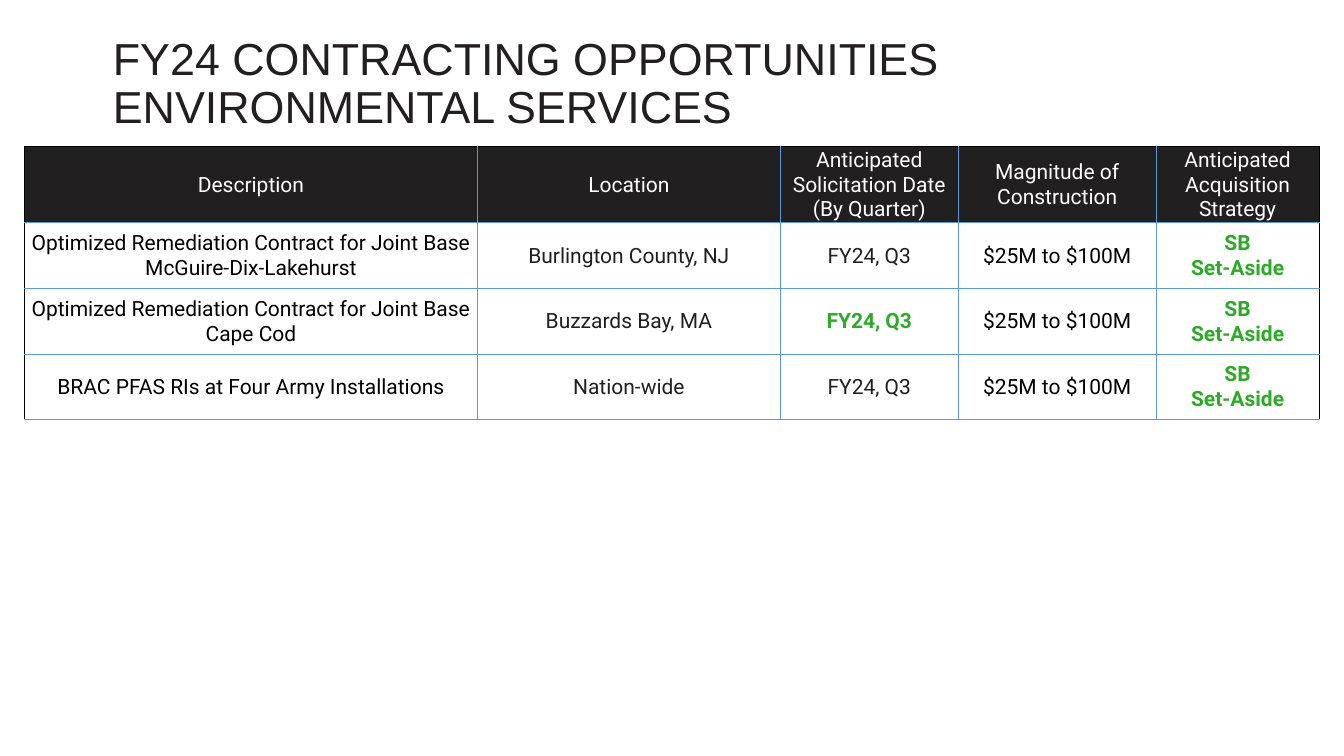
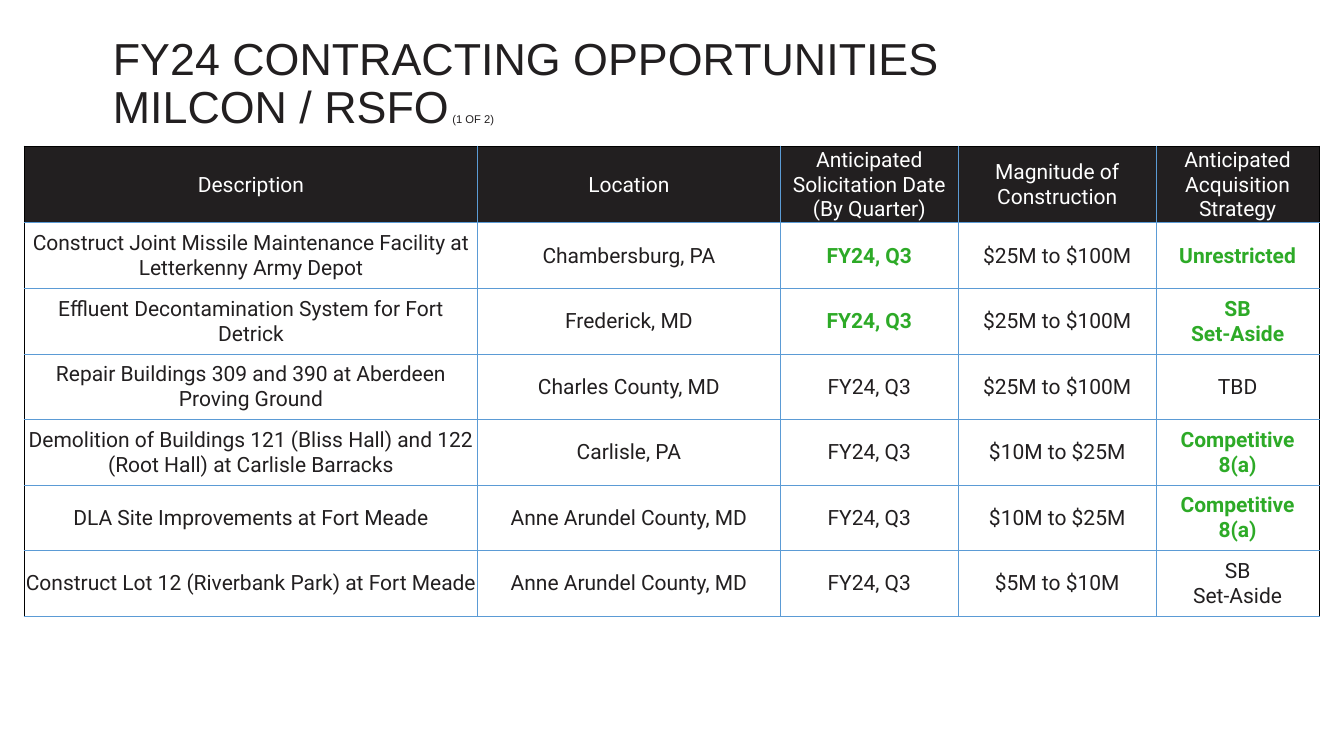
import pptx
import pptx.dml.color
import pptx.enum.text
import pptx.oxml
import pptx.oxml.ns
import pptx.util

# Content
HEAD = ["Description", "Location", "Anticipated\nSolicitation Date\n(By Quarter)",
        "Magnitude of Construction", "Anticipated\nAcquisition Strategy"]
TITLE = "FY24 CONTRACTING OPPORTUNITIES"
Q3 = "FY24, Q3"
SMALL, MID, LARGE = "$5M to $10M", "$10M to $25M", "$25M to $100M"
ASIDE = "SB\nSet-Aside"
COMP = "Competitive\n8(a)"

# Each row ends with the numbers of its columns in bold green
DECK = [
    {"topic": "ENVIRONMENTAL SERVICES", "part": "",
     "tints": ["black", "ink", "ink", "black", "ink"],
     "rows": [
         ("Optimized Remediation Contract for Joint Base McGuire-Dix-Lakehurst",
          "Burlington County, NJ", Q3, LARGE, ASIDE, {4}),
         ("Optimized Remediation Contract for Joint Base Cape Cod",
          "Buzzards Bay, MA", Q3, LARGE, ASIDE, {2, 4}),
         ("BRAC PFAS RIs at Four Army Installations",
          "Nation-wide", Q3, LARGE, ASIDE, {4}),
     ]},
    {"topic": "MILCON / RSFO", "part": " (1 OF 2)",
     "tints": ["ink"] * 5,
     "rows": [
         ("Construct Joint Missile Maintenance Facility at Letterkenny Army Depot",
          "Chambersburg, PA", Q3, LARGE, "Unrestricted", {2, 4}),
         ("Effluent Decontamination System for Fort Detrick",
          "Frederick, MD", Q3, LARGE, ASIDE, {2, 4}),
         ("Repair Buildings 309 and 390 at Aberdeen Proving Ground",
          "Charles County, MD", Q3, LARGE, "TBD", set()),
         ("Demolition of Buildings 121 (Bliss Hall) and 122 (Root Hall) at Carlisle Barracks",
          "Carlisle, PA", Q3, MID, COMP, {4}),
         ("DLA Site Improvements at Fort Meade",
          "Anne Arundel County, MD", Q3, MID, COMP, {4}),
         ("Construct Lot 12 (Riverbank Park) at Fort Meade",
          "Anne Arundel County, MD", Q3, SMALL, ASIDE, set()),
     ]},
]

# Shared style: 200 px to the inch
PX = 4572
WIDE, HIGH = 2667, 1500
BOX = (224, 72, 2362, 116)
LEFT, TOP = 48, 290
COLS = [900, 600, 354, 392, 324]
HEAD_H, ROW_H = 124, 130
HUES = {"ink": "221F20", "black": "000000", "white": "FFFFFF",
        "green": "2DAA27", "blue": "5B9BD5"}
FONTS = {
    "title": {"name": "Arial", "size": pptx.util.Pt(32), "bold": False},
    "part": {"name": "Arial", "size": pptx.util.Pt(8), "bold": False},
    "cell": {"name": "Roboto", "size": pptx.util.Pt(15), "bold": False},
    "mark": {"name": "Roboto", "size": pptx.util.Pt(15), "bold": True},
}
FRAME = {"margin_left": 0, "margin_top": 0, "margin_right": 0,
         "margin_bottom": 0, "word_wrap": True,
         "vertical_anchor": pptx.enum.text.MSO_ANCHOR.TOP}
CELL = {"margin_left": 2 * PX, "margin_top": 2 * PX, "margin_right": 2 * PX,
        "margin_bottom": 0, "vertical_anchor": pptx.enum.text.MSO_ANCHOR.MIDDLE}
PLAIN = {"first_row": False, "horz_banding": False}


def put(item, values):
    for name, value in values.items():
        setattr(item, name, value)


def hue(name):
    return pptx.dml.color.RGBColor.from_string(HUES[name])


def ink(font, style, tint):
    put(font, FONTS[style])
    font.color.rgb = hue(tint)


def edge(cell, side, outer):
    """Draw one cell border: black on the outside, thin blue within."""
    tint, width = ("black", 12700) if outer else ("blue", 6350)
    cell._tc.get_or_add_tcPr().append(pptx.oxml.parse_xml(
        f'<a:ln{side} {pptx.oxml.ns.nsdecls("a")} w="{width}"><a:solidFill>'
        f'<a:srgbClr val="{HUES[tint]}"/></a:solidFill></a:ln{side}>'))


def add_title(slide, topic, part):
    frame = slide.shapes.add_textbox(*(n * PX for n in BOX)).text_frame
    put(frame, FRAME)
    lines = [[(TITLE, "title")], [(topic, "title"), (part, "part")]]
    for i, line in enumerate(lines):
        para = frame.add_paragraph() if i else frame.paragraphs[0]
        para.line_spacing = 0.9
        for text, style in line:
            if text:
                run = para.add_run()
                run.text = text
                ink(run.font, style, "ink")


def fill_cell(cell, text, style, tint):
    put(cell, CELL)
    cell.text = text
    for para in cell.text_frame.paragraphs:
        para.alignment = pptx.enum.text.PP_ALIGN.CENTER
        for run in para.runs:
            ink(run.font, style, tint)


def add_grid(slide, rows, tints):
    high = HEAD_H + ROW_H * len(rows)
    grid = slide.shapes.add_table(
        len(rows) + 1, len(COLS), LEFT * PX, TOP * PX,
        sum(COLS) * PX, high * PX).table
    put(grid, PLAIN)
    for col, width in zip(grid.columns, COLS):
        col.width = width * PX
    for r, (*texts, marks) in enumerate([(*HEAD, set()), *rows]):
        grid.rows[r].height = (ROW_H if r else HEAD_H) * PX
        for c, text in enumerate(texts):
            cell = grid.cell(r, c)
            marked = c in marks
            tint = "green" if marked else tints[c] if r else "white"
            fill_cell(cell, text, "mark" if marked else "cell", tint)
            outer = {"L": c == 0, "R": c == len(COLS) - 1, "T": r == 0, "B": False}
            for side, flag in outer.items():
                edge(cell, side, flag)
            if r:
                cell.fill.background()
            else:
                cell.fill.solid()
                cell.fill.fore_color.rgb = hue("ink")


def main():
    deck = pptx.Presentation()
    put(deck, {"slide_width": WIDE * PX, "slide_height": HIGH * PX})
    for page in DECK:
        slide = deck.slides.add_slide(deck.slide_layouts[6])
        add_title(slide, page["topic"], page["part"])
        add_grid(slide, page["rows"], page["tints"])
    deck.save("out.pptx")


if __name__ == "__main__":
    main()
